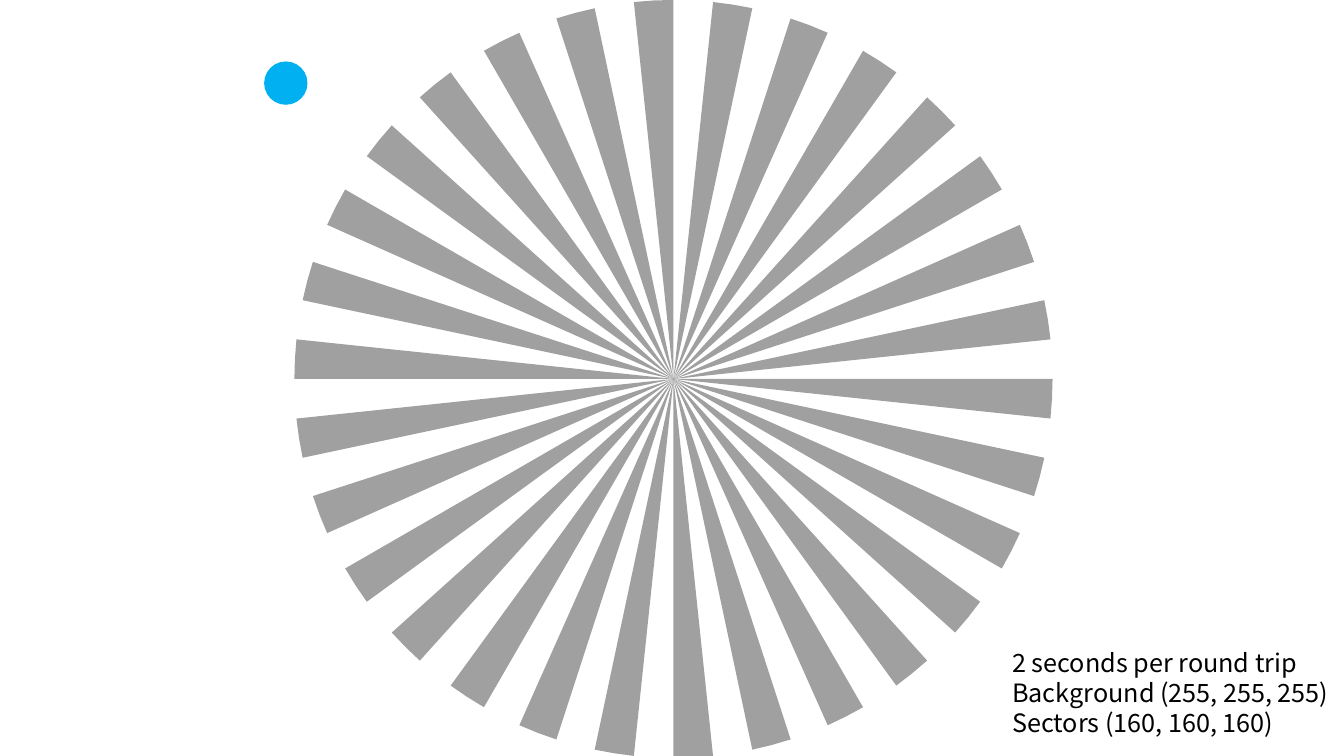
import math

import pptx
import pptx.dml.color
import pptx.enum.shapes
import pptx.enum.text
import pptx.util

Inches = pptx.util.Inches
FONT = "Noto Sans CJK JP"
SECTORS = 30
NOTES = ["2 seconds per round trip", "Background (255, 255, 255)", "Sectors (160, 160, 160)"]


def rgb(color):
    return pptx.dml.color.RGBColor.from_string(color)


def paint(sp, color):
    sp.shadow.inherit = False
    sp.fill.solid()
    sp.fill.fore_color.rgb = rgb(color)
    sp.line.fill.background()


def add_wheel(slide, left, top, size, color):
    """Fill every other slice of a disc, clockwise from three o'clock."""
    radius = size / 2
    cx, cy = left + radius, top + radius
    step = 360 / SECTORS
    group = slide.shapes.add_group_shape()
    for i in range(SECTORS):
        angles = [math.radians(step * (i + part)) for part in (0, 0.25, 0.5)]
        rim = [(Inches(cx + radius * math.cos(a)), Inches(cy + radius * math.sin(a)))
               for a in angles]
        builder = group.shapes.build_freeform(Inches(cx), Inches(cy))
        builder.add_line_segments(rim, close=True)
        paint(builder.convert_to_shape(), color)


def add_notes(slide, left, top, width, height, lines):
    box = slide.shapes.add_textbox(*map(Inches, (left, top, width, height)))
    tf = box.text_frame
    tf.word_wrap = False
    tf.auto_size = pptx.enum.text.MSO_AUTO_SIZE.SHAPE_TO_FIT_TEXT
    tf.text = "\n".join(lines)
    font_format = {"name": FONT, "size": pptx.util.Pt(18)}
    for p in tf.paragraphs:
        font = p.runs[0].font
        for name, value in font_format.items():
            setattr(font, name, value)
        font.color.rgb = rgb("000000")


def add_dot(slide, left, top, size, color):
    oval = pptx.enum.shapes.MSO_SHAPE.OVAL
    sp = slide.shapes.add_shape(oval, *map(Inches, (left, top, size, size)))
    paint(sp, color)


def main():
    prs = pptx.Presentation()
    prs.slide_width, prs.slide_height = Inches(13.33), Inches(7.5)
    slide = prs.slides.add_slide(prs.slide_layouts[6])
    slide.background.fill.solid()
    slide.background.fill.fore_color.rgb = rgb("FFFFFF")
    add_wheel(slide, 2.92, 0, 7.52, "A0A0A0")
    add_notes(slide, 9.94, 6.37, 3.39, 1.01, NOTES)
    add_dot(slide, 2.62, 0.61, 0.43, "00B0F0")
    prs.save("out.pptx")


if __name__ == "__main__":
    main()
